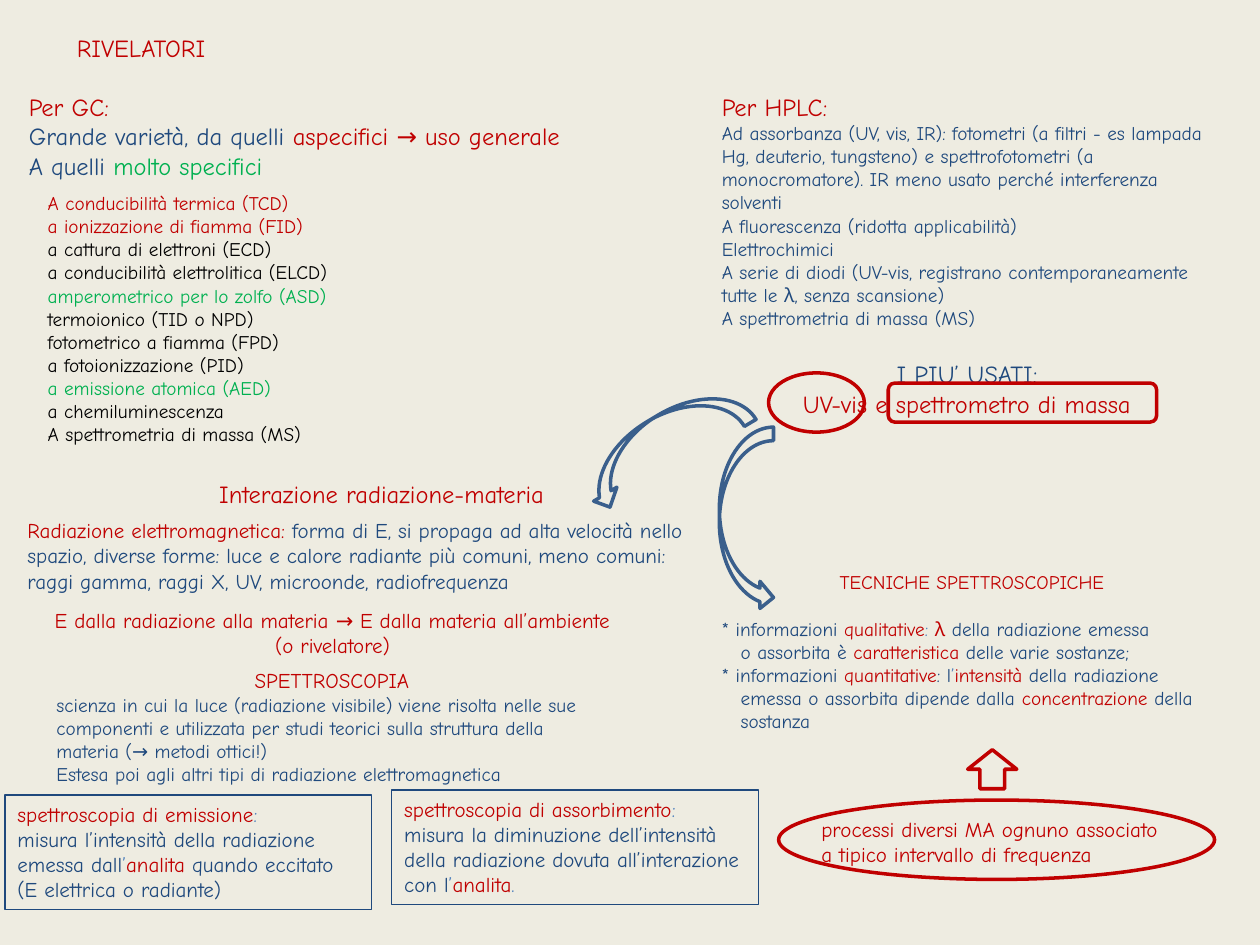
import pptx
import pptx.dml.color
import pptx.enum.shapes
import pptx.enum.text
import pptx.util

COLOURS = {
    "paper": "EEECE1", "red": "C00000", "navy": "1F497D", "green": "00B050",
    "black": "000000", "light": "4F81BD", "steel": "3A5F8C",
}
FONT = "Comic Neue"
COLUMNS, ROWS = 100, 75
LEFT, CENTRE = pptx.enum.text.PP_ALIGN.LEFT, pptx.enum.text.PP_ALIGN.CENTER
KINDS = pptx.enum.shapes.MSO_SHAPE


def colour(name):
    return pptx.dml.color.RGBColor.from_string(COLOURS[name])


def apply(target, values):
    for name, value in values.items():
        setattr(target, name, value)


def line(*runs, size=11, align=LEFT, before=0, indent=0):
    return {"runs": runs, "size": size, "indent": indent,
            "format": {"alignment": align, "space_before": pptx.util.Pt(before)}}


class SlideBuilder:
    def __init__(self, presentation):
        self.width = presentation.slide_width
        self.height = presentation.slide_height
        self.slide = presentation.slides.add_slide(presentation.slide_layouts[5])
        fill = self.slide.background.fill
        fill.solid()
        fill.fore_color.rgb = colour("paper")

    def place(self, column, row, columns, rows):
        return [int(self.width * column / COLUMNS), int(self.height * row / ROWS),
                int(self.width * columns / COLUMNS), int(self.height * rows / ROWS)]

    def fill_text(self, shape, lines, wrap=True):
        frame = shape.text_frame
        apply(frame, {
            "word_wrap": wrap,
            "auto_size": pptx.enum.text.MSO_AUTO_SIZE.SHAPE_TO_FIT_TEXT,
            "vertical_anchor": pptx.enum.text.MSO_ANCHOR.TOP,
        })
        for index, content in enumerate(lines):
            paragraph = frame.add_paragraph() if index else frame.paragraphs[0]
            apply(paragraph, content["format"])
            if content["indent"]:
                indent = int(self.width * content["indent"] / COLUMNS)
                paragraph._p.get_or_add_pPr().set("marL", str(indent))
            for name, text in content["runs"]:
                run = paragraph.add_run()
                run.text = text
                apply(run.font, {"name": FONT, "size": pptx.util.Pt(content["size"])})
                run.font.color.rgb = colour(name)

    def title(self, area, content):
        shape = self.slide.shapes.title
        apply(shape, dict(zip(("left", "top", "width", "height"), self.place(*area))))
        self.fill_text(shape, [content], wrap=False)

    def text(self, area, *lines, wrap=True):
        self.fill_text(self.slide.shapes.add_textbox(*self.place(*area)), lines, wrap)

    def outline(self, kind, area, *lines, line_colour="red", weight=2, rotation=0, flip=False):
        shape = self.slide.shapes.add_shape(kind, *self.place(*area))
        shape.shadow.inherit = False
        shape.fill.background()
        shape.line.color.rgb = colour(line_colour)
        shape.line.width = pptx.util.Pt(weight)
        shape.rotation = rotation
        if flip:
            shape._element.spPr.xfrm.set("flipH", "1")
        if lines:
            self.fill_text(shape, lines)

    def definition(self, area, *lines):
        self.outline(KINDS.RECTANGLE, area, *lines, line_colour="navy", weight=0.75)

    def curved_arrow(self, column, row, rotation=0):
        self.outline(KINDS.CURVED_LEFT_ARROW, (column, row, 4.3, 14.6),
                     line_colour="steel", rotation=rotation, flip=True)


def gas_chromatography(builder):
    detectors = [
        ("red", "A conducibilità termica (TCD)"),
        ("red", "a ionizzazione di fiamma (FID)"),
        ("black", "a cattura di elettroni (ECD)"),
        ("black", "a conducibilità elettrolitica (ELCD)"),
        ("green", "amperometrico per lo zolfo (ASD)"),
        ("black", "termoionico (TID o NPD)"),
        ("black", "fotometrico a fiamma (FPD)"),
        ("black", "a fotoionizzazione (PID)"),
        ("green", "a emissione atomica (AED)"),
        ("black", "a chemiluminescenza"),
        ("black", "A spettrometria di massa (MS)"),
    ]
    builder.text((2.8, 14.7, 26.8, 21.4), *map(line, detectors))
    builder.text(
        (1.3, 6.8, 47.9, 8.1),
        line(("red", "Per GC:"), size=14),
        line(("navy", "Grande varietà, da quelli "), ("red", "aspecifici → uso generale"), size=14),
        line(("navy", "A quelli "), ("green", "molto specifici"), size=14),
        wrap=False)


def liquid_chromatography(builder):
    detectors = [
        "Ad assorbanza (UV, vis, IR): fotometri (a filtri - es lampada Hg, deuterio, tungsteno) "
        "e spettrofotometri (a monocromatore). IR meno usato perché interferenza solventi",
        "A fluorescenza (ridotta applicabilità)",
        "Elettrochimici",
        "A serie di diodi (UV-vis, registrano contemporaneamente tutte le λ, senza scansione)",
        "A spettrometria di massa (MS)",
    ]
    builder.text(
        (56.3, 6.8, 40.9, 27.1),
        line(("red", "Per HPLC:"), size=14),
        *[line(("navy", detector)) for detector in detectors],
        line(("navy", "I PIU’ USATI:"), size=14, align=CENTRE, before=17),
        line(("red", "UV-vis e spettrometro di massa"), size=14, align=CENTRE))
    builder.outline(KINDS.OVAL, (61, 29.6, 7.6, 4.7))
    builder.outline(KINDS.ROUNDED_RECTANGLE, (70.5, 30.4, 21.3, 3.1))
    builder.curved_arrow(50.5, 27.9, rotation=59)
    builder.curved_arrow(57.1, 33.9)


def radiation(builder):
    builder.text((15, 37.5, 30.6, 3.4),
                 line(("red", "Interazione radiazione-materia"), size=14, align=CENTRE), wrap=False)
    builder.text(
        (1.2, 40.6, 56.7, 7.1),
        line(("red", "Radiazione elettromagnetica: "),
             ("navy", "forma di E, si propaga ad alta velocità nello spazio, diverse forme: luce e "
                      "calore radiante più comuni, meno comuni: raggi gamma, raggi X, UV, "
                      "microonde, radiofrequenza"), size=12))
    builder.text(
        (1.2, 47.7, 50.4, 5),
        line(("red", "E dalla radiazione alla materia → E dalla materia all’ambiente"),
             size=12, align=CENTRE),
        line(("red", "(o rivelatore)"), size=12, align=CENTRE))
    builder.text(
        (3.5, 52.5, 45.7, 10.4),
        line(("red", "SPETTROSCOPIA"), size=12, align=CENTRE),
        line(("navy", "scienza in cui la luce (radiazione visibile) viene risolta nelle sue "
                      "componenti e utilizzata per studi teorici sulla struttura della materia "
                      "(→ metodi ottici!)")),
        line(("navy", "Estesa poi agli altri tipi di radiazione elettromagnetica")))
    builder.definition(
        (31.1, 62.7, 29.1, 9.1),
        line(("red", "spettroscopia di assorbimento"), ("light", ":"), size=12),
        line(("navy", "misura la diminuzione dell’intensità della radiazione dovuta "
                      "all’interazione con l"),
             ("light", "’"), ("red", "analita"), ("light", "."), size=12))
    builder.definition(
        (0.4, 63.1, 29.1, 9.1),
        line(("red", "spettroscopia di emissione"), ("light", ":"), size=12),
        line(("navy", "misura l’intensità della radiazione emessa dall"), ("light", "’"),
             ("red", "analita "), ("navy", "quando eccitato"), size=12),
        line(("navy", "(E elettrica o radiante)"), size=12))


def techniques(builder):
    builder.text(
        (56.3, 44.8, 41.7, 14),
        line(("red", "TECNICHE SPETTROSCOPICHE"), align=CENTRE),
        line(("navy", "* informazioni "), ("red", "qualitative"), ("light", ": "), ("red", "λ "),
             ("navy", "della radiazione emessa"), before=13.2),
        line(("navy", "o assorbita è "), ("red", "caratteristica "),
             ("navy", "delle varie sostanze;"), indent=1.5),
        line(("navy", "* informazioni "), ("red", "quantitative"), ("navy", ": l"),
             ("light", "’"), ("red", "intensità "), ("navy", "della radiazione")),
        line(("navy", "emessa o assorbita dipende dalla "), ("red", "concentrazione "),
             ("navy", "della sostanza"), indent=1.5))
    builder.text(
        (64.2, 64.3, 31.5, 5),
        line(("red", "processi diversi MA ognuno associato"), size=12),
        line(("red", "a tipico intervallo di frequenza"), size=12))
    builder.outline(KINDS.OVAL, (61.8, 63.5, 34.6, 6.3))
    builder.outline(KINDS.DOWN_ARROW, (76.8, 59.5, 3.9, 3.1), rotation=180)


def main():
    presentation = pptx.Presentation()
    presentation.slide_width = pptx.util.Inches(10)
    presentation.slide_height = pptx.util.Inches(7.5)
    builder = SlideBuilder(presentation)
    builder.title((5.1, 2.1, 14.5, 3.4), line(("red", "RIVELATORI"), size=14))
    for section in (gas_chromatography, liquid_chromatography, radiation, techniques):
        section(builder)
    presentation.save("out.pptx")


if __name__ == "__main__":
    main()
